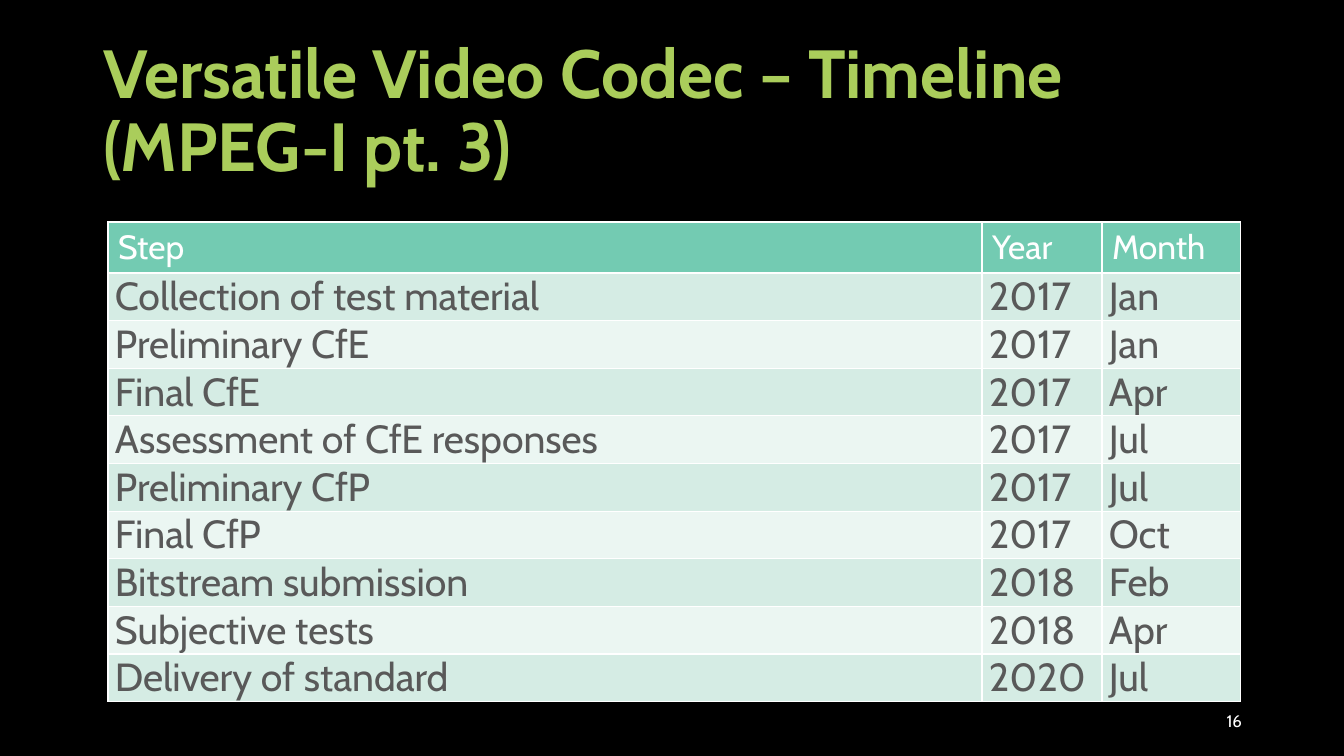
"""Build the codec timeline slide: a title, a table of steps and a page number."""
from dataclasses import dataclass

from lxml import etree
from pptx import Presentation, util as u
from pptx.dml.color import RGBColor
from pptx.enum import text
from pptx.oxml import ns


@dataclass(frozen=True)
class Theme:
    font: str = "Cabin"
    back: str = "000000"
    title: str = "AACD5B"
    head: str = "73CBB2"
    bands: tuple = ("D5ECE4", "EBF6F2")
    ink: str = "595959"
    light: str = "FFFFFF"
    title_size: float = 48.6
    head_size: int = 24
    body_size: int = 28
    page_size: int = 12


STEPS = [
    ("Collection of test material", "2017", "Jan"),
    ("Preliminary CfE", "2017", "Jan"),
    ("Final CfE", "2017", "Apr"),
    ("Assessment of CfE responses", "2017", "Jul"),
    ("Preliminary CfP", "2017", "Jul"),
    ("Final CfP", "2017", "Oct"),
    ("Bitstream submission", "2018", "Feb"),
    ("Subjective tests", "2018", "Apr"),
    ("Delivery of standard", "2020", "Jul"),
]


def px(n):
    return u.Emu(round(n * u.Inches(1) / 100.8))


class Deck:
    def __init__(self, theme):
        self.theme = theme
        self.prs = Presentation()
        self.prs.slide_width, self.prs.slide_height = px(1344), px(756)
        self.slide = self.prs.slides.add_slide(self.prs.slide_layouts[5])
        self.paint(self.slide.background, theme.back)

    def paint(self, item, color):
        item.fill.solid()
        item.fill.fore_color.rgb = RGBColor.from_string(color)

    def label(self, frame, words, size, color, bold=False):
        frame.text = words
        par = frame.paragraphs[0]
        font = par.font
        font.name, font.size, font.bold = self.theme.font, u.Pt(size), bold
        font.color.rgb = RGBColor.from_string(color)
        return par

    def title(self, words, left, top, width, height):
        box = self.slide.shapes.title
        box.left, box.top, box.width, box.height = map(px, (left, top, width, height))
        frame = box.text_frame
        frame.word_wrap = True
        frame.auto_size = text.MSO_AUTO_SIZE.NONE
        frame.vertical_anchor = text.MSO_ANCHOR.MIDDLE
        par = self.label(frame, words, self.theme.title_size, self.theme.title, True)
        par.alignment = text.PP_ALIGN.LEFT
        par.line_spacing = 0.9

    def border(self, cell):
        props = cell._tc.get_or_add_tcPr()
        for side in "LRTB":
            line = etree.SubElement(props, ns.qn(f"a:ln{side}"), w=str(u.Pt(1)))
            fill = etree.SubElement(line, ns.qn("a:solidFill"))
            etree.SubElement(fill, ns.qn("a:srgbClr"), val=self.theme.light)

    def table(self, head, rows, left, top, widths, tall, step):
        theme = self.theme
        size = sum(widths), tall + step * len(rows)
        grid = self.slide.shapes.add_table(
            len(rows) + 1, len(head), px(left), px(top), *map(px, size)).table
        grid.horz_banding = False
        for col, width in zip(grid.columns, widths):
            col.width = px(width)
        for r, row in enumerate([head, *rows]):
            grid.rows[r].height = px(step if r else tall)
            for c, words in enumerate(row):
                cell = grid.cell(r, c)
                self.border(cell)
                if r:
                    cell.margin_left = cell.margin_right = px(7)
                    cell.margin_top = cell.margin_bottom = 0
                    self.paint(cell, theme.bands[(r - 1) % 2])
                    self.label(cell.text_frame, words, theme.body_size, theme.ink)
                else:
                    self.paint(cell, theme.head)
                    par = self.label(cell.text_frame, words, theme.head_size, theme.light)
                    par.alignment = text.PP_ALIGN.LEFT

    def page(self, words, left, top, width, height):
        box = self.slide.shapes.add_textbox(*map(px, (left, top, width, height)))
        frame = box.text_frame
        frame.word_wrap = True
        frame.vertical_anchor = text.MSO_ANCHOR.MIDDLE
        par = self.label(frame, words, self.theme.page_size, self.theme.light)
        par.alignment = text.PP_ALIGN.RIGHT


def main():
    deck = Deck(Theme())
    deck.title("Versatile Video Codec – Timeline (MPEG-I pt. 3)", 93, 40, 1159, 146)
    deck.table(("Step", "Year", "Month"), STEPS, 108, 222, (874, 120, 139), 51, 47)
    deck.page("16", 950, 701, 302, 40)
    deck.prs.save("out.pptx")


if __name__ == "__main__":
    main()
